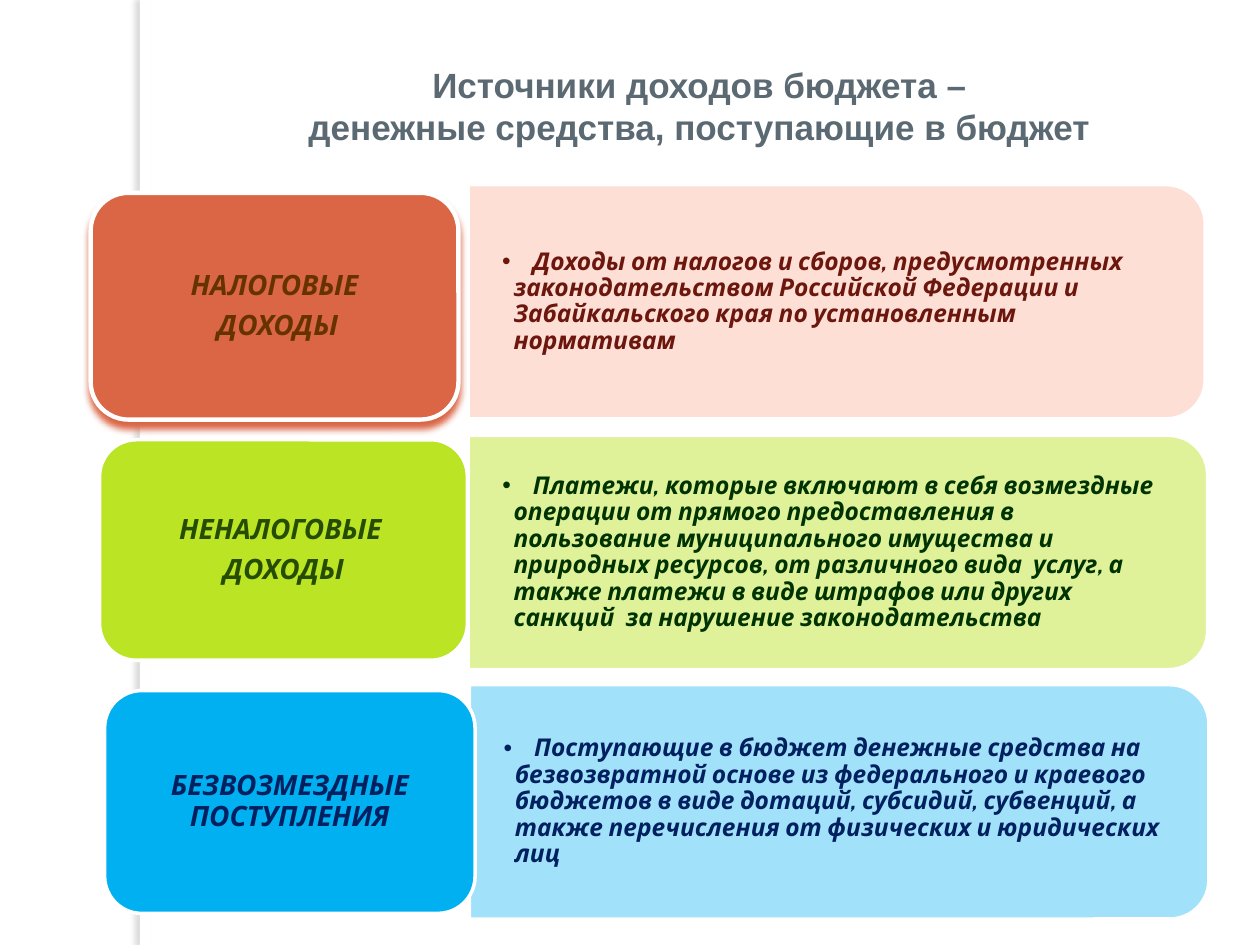
from dataclasses import dataclass

from lxml import etree
from pptx import Presentation
from pptx.dml.color import RGBColor
from pptx.enum.shapes import MSO_SHAPE
from pptx.enum.text import MSO_ANCHOR, PP_ALIGN
from pptx.oxml.ns import qn
from pptx.util import Pt

RECTANGLE = MSO_SHAPE.RECTANGLE
ROUNDED = MSO_SHAPE.ROUNDED_RECTANGLE
ROUNDED_TOP = MSO_SHAPE.ROUND_2_SAME_RECTANGLE
MIDDLE = MSO_ANCHOR.MIDDLE
CENTER = PP_ALIGN.CENTER
LEFT = PP_ALIGN.LEFT


@dataclass(frozen=True)
class Theme:
    """Colours, fonts and type sizes of the slide."""
    white: str = "FFFFFF"
    title: str = "5B6973"
    strip_shadow: str = "737576"
    title_font: str = "Arial"
    body_font: str = "Cabin"
    title_size: float = 20
    label_size: float = 16
    body_size: float = 14


@dataclass(frozen=True)
class Source:
    """One source of income: its wording, boxes and colours."""
    label: tuple
    description: str
    tile: tuple
    bar: tuple
    fill: str
    bar_fill: str
    bar_opacity: int
    label_color: str
    body_color: str
    border: float = 2
    raised: bool = False


THEME = Theme()
BAR_HEIGHT = 133.9
SOURCES = (
    Source(("НАЛОГОВЫЕ", " ДОХОДЫ"),
           "Доходы от налогов и сборов, предусмотренных законодательством "
           "Российской Федерации и Забайкальского края по установленным нормативам",
           (51.8, 110.2, 210.2, 129.6), (267.5, 105.5, 421.2, BAR_HEIGHT),
           "DA6646", "FEA890", 36, "663300", "6C170E", 2.5, True),
    Source(("НЕНАЛОГОВЫЕ ", "ДОХОДЫ"),
           "Платежи, которые включают в себя возмездные операции от прямого "
           "предоставления в пользование муниципального имущества и природных "
           "ресурсов, от различного вида  услуг, а также платежи в виде штрафов "
           "или других санкций  за нарушение законодательства",
           (56.9, 251.3, 210.2, 126), (267.5, 248.8, 422.6, BAR_HEIGHT),
           "BBE424", "BBE424", 46, "264C00", "003300"),
    Source(("БЕЗВОЗМЕЗДНЫЕ ПОСТУПЛЕНИЯ",),
           "Поступающие в бюджет денежные средства на безвозвратной основе из "
           "федерального и краевого бюджетов в виде дотаций, субсидий, субвенций, "
           "а также перечисления от физических и юридических лиц",
           (59.8, 394.6, 211.7, 127.4), (268.2, 391.3, 422.6, BAR_HEIGHT),
           "00B0F0", "00B0F0", 37, "002060", "002060"),
)


def set_values(target, values):
    """Set every attribute named in a dict of format values."""
    for name, value in values.items():
        setattr(target, name, value)


def add_panel(slide, preset, box, fill, border=0, opacity=100):
    """Add a filled shape with a white border of the given width."""
    shape = slide.shapes.add_shape(preset, *map(Pt, box))
    shape.shadow.inherit = False
    shape.fill.solid()
    shape.fill.fore_color.rgb = RGBColor.from_string(fill)
    if border:
        shape.line.color.rgb = RGBColor.from_string(THEME.white)
        shape.line.width = Pt(border)
    else:
        shape.line.fill.background()
    if opacity < 100:
        color = shape.element.spPr.find(qn("a:solidFill"))[0]
        etree.SubElement(color, qn("a:alpha"), val=str(opacity * 1000))
    return shape


def add_shadow(shape, color, opacity, blur, distance, angle):
    """Give a shape an outer shadow."""
    effects = shape.element.spPr.find(qn("a:effectLst"))
    shadow = etree.SubElement(
        effects, qn("a:outerShdw"), blurRad=str(Pt(blur)), dist=str(Pt(distance)),
        dir=str(angle * 60000), algn="ctr", rotWithShape="0")
    tint = etree.SubElement(shadow, qn("a:srgbClr"), val=color)
    etree.SubElement(tint, qn("a:alpha"), val=str(opacity * 1000))


def add_text(slide, box, lines, font, size, color, italic=True, align=CENTER,
             margins=(5, 2.5), line_spacing=0.9, space_after=0):
    """Add a text box with one bold paragraph a line and return its paragraphs."""
    frame = slide.shapes.add_textbox(*map(Pt, box)).text_frame
    across, down = map(Pt, margins)
    set_values(frame, {"word_wrap": True, "vertical_anchor": MIDDLE,
                       "margin_left": across, "margin_right": across,
                       "margin_top": down, "margin_bottom": down})
    frame.text = "\n".join(lines)
    for paragraph in frame.paragraphs:
        set_values(paragraph, {"alignment": align, "line_spacing": line_spacing,
                               "space_after": Pt(space_after)})
        for run in paragraph.runs:
            set_values(run.font, {"name": font, "size": Pt(size),
                                  "bold": True, "italic": italic})
            run.font.color.rgb = RGBColor.from_string(color)
    return frame.paragraphs


def add_bullet(paragraph, margin, indent, tab):
    """Give a paragraph a round bullet, a hanging indent and a tab stop."""
    properties = paragraph._p.get_or_add_pPr()
    properties.set("marL", str(Pt(margin)))
    properties.set("indent", str(Pt(indent)))
    etree.SubElement(properties, qn("a:buFont"), typeface="Arial")
    etree.SubElement(properties, qn("a:buChar"), char="•")
    stops = etree.SubElement(properties, qn("a:tabLst"))
    etree.SubElement(stops, qn("a:tab"), pos=str(Pt(tab)), algn="l")


def add_strip(slide, box):
    """Add the white vertical strip with its soft shadow."""
    strip = add_panel(slide, RECTANGLE, box, THEME.white)
    add_shadow(strip, THEME.strip_shadow, 25, 3, 3, 180)


def add_title(slide, box):
    """Add the two-line title."""
    title = "Источники доходов бюджета –\vденежные средства, поступающие в бюджет"
    add_text(slide, box, [title], THEME.title_font, THEME.title_size, THEME.title,
             italic=False, margins=(7.2, 3.6), line_spacing=1.0)


def add_description(slide, source, box):
    """Add the pale bar, rounded on its right side, and its bulleted text."""
    left, top, width, height = box
    shift = (width - height) / 2
    bar = add_panel(slide, ROUNDED_TOP, (left + shift, top - shift, height, width),
                    source.bar_fill, 2, source.bar_opacity)
    bar.rotation = 90
    paragraphs = add_text(
        slide, (left, top + 6.5, width - 6.5, height - 13), ["\t" + source.description],
        THEME.body_font, THEME.body_size, source.body_color, align=LEFT,
        margins=(19.5, 10), space_after=2.1)
    add_bullet(paragraphs[0], 6.5, -8.6, 17.5)


def add_label(slide, source, box):
    """Add the bright tile and its centred label."""
    left, top, width, height = box
    tile = add_panel(slide, ROUNDED, box, source.fill, source.border)
    if source.raised:
        add_shadow(tile, source.fill, 100, 4, 4, 90)
    inset = 6.3
    add_text(slide, (left + inset, top + inset, width - 2 * inset, height - 2 * inset),
             source.label, THEME.body_font, THEME.label_size, source.label_color,
             margins=(5, 2.5), space_after=5.6)


def main():
    """Build the slide and save it."""
    presentation = Presentation()
    set_values(presentation, {"slide_width": Pt(720), "slide_height": Pt(540)})
    slide = presentation.slides.add_slide(presentation.slide_layouts[6])
    add_strip(slide, (80, 0, 5.8, 540))
    for source in SOURCES:
        add_description(slide, source, source.bar)
        add_label(slide, source, source.tile)
    add_title(slide, (139, 31.7, 521.3, 56.9))
    presentation.save("out.pptx")


if __name__ == "__main__":
    main()
